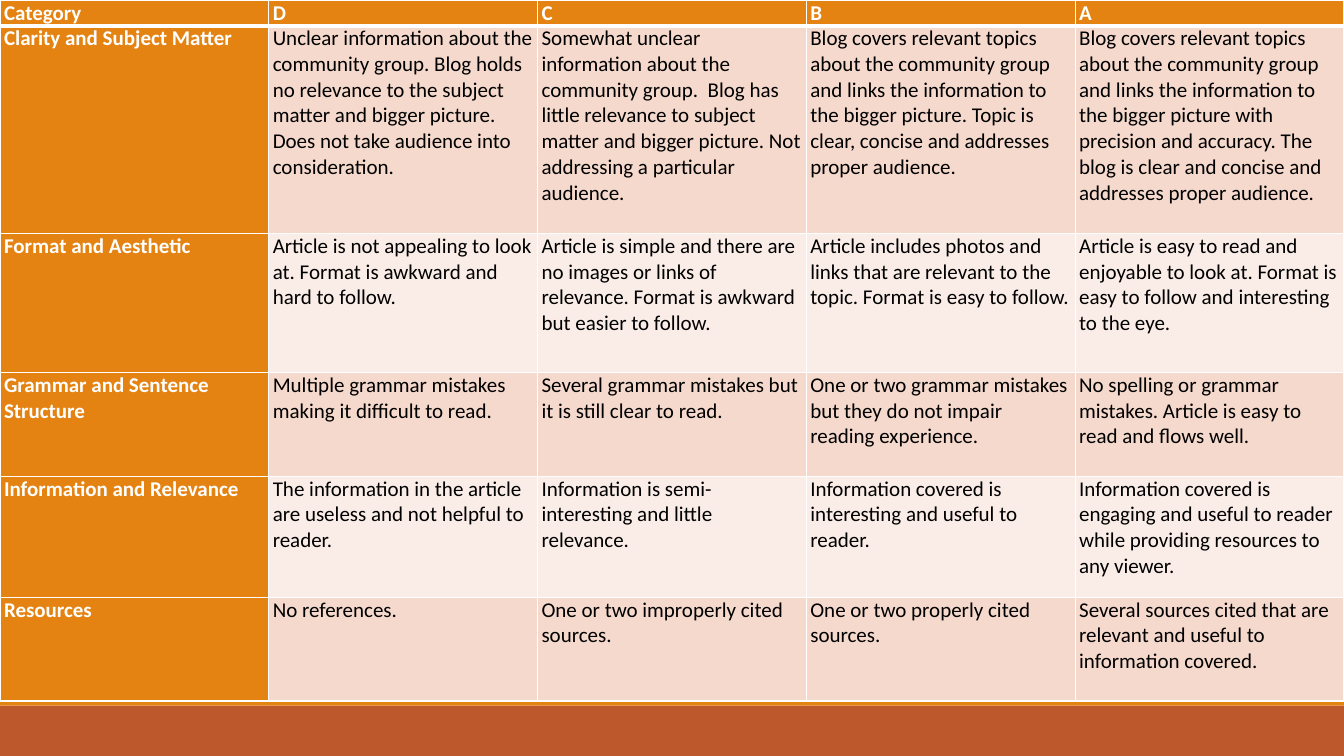
"""Build the blog marking rubric slide."""
from dataclasses import dataclass

import lxml.etree
import pptx
import pptx.dml.color
import pptx.enum.shapes
import pptx.oxml.ns
import pptx.util

Pt = pptx.util.Pt
HUES = {
    "accent": "E48312",
    "footer": "BD582C",
    "dark": "F5D9CC",
    "light": "FAEDE7",
    "white": "FFFFFF",
    "black": "000000",
}
WIDTH, HEIGHT = 960, 540
INSET = {
    "margin_left": Pt(2.88),
    "margin_right": Pt(2.88),
    "margin_top": Pt(0),
    "margin_bottom": Pt(0),
}
FONT = {"name": "Calibri", "size": Pt(15)}


@dataclass
class Band:
    """A full-width strip at the foot of the slide."""
    top: float
    height: float
    hue: str


@dataclass
class Row:
    """A rubric row: its height and its texts."""
    height: float
    texts: tuple[str, ...]


BANDS = [Band(504, 36, "footer"), Band(499, 5, "accent")]
ROWS = [
    Row(12.24, ("Category", "D", "C", "B", "A")),
    Row(148.4, (
        "Clarity and Subject Matter",
        "Unclear information about the community group. Blog holds no relevance "
        "to the subject matter and bigger picture. Does not take audience into "
        "consideration.",
        "Somewhat unclear information about the community group.  Blog has little "
        "relevance to subject matter and bigger picture. Not addressing a "
        "particular audience.",
        "Blog covers relevant topics about the community group and links the "
        "information to the bigger picture. Topic is clear, concise and addresses "
        "proper audience.",
        "Blog covers relevant topics about the community group and links the "
        "information to the bigger picture with precision and accuracy. The blog "
        "is clear and concise and addresses proper audience.",
    )),
    Row(99.2, (
        "Format and Aesthetic",
        "Article is not appealing to look at. Format is awkward and hard to follow.",
        "Article is simple and there are no images or links of relevance. Format "
        "is awkward but easier to follow.",
        "Article includes photos and links that are relevant to the topic. Format "
        "is easy to follow.",
        "Article is easy to read and enjoyable to look at. Format is easy to "
        "follow and interesting to the eye.",
    )),
    Row(74.2, (
        "Grammar and Sentence Structure",
        "Multiple grammar mistakes making it difficult to read.",
        "Several grammar mistakes but it is still clear to read.",
        "One or two grammar mistakes but they do not impair reading experience.",
        "No spelling or grammar mistakes. Article is easy to read and flows well.",
    )),
    Row(86.4, (
        "Information and Relevance",
        "The information in the article are useless and not helpful to reader.",
        "Information is semi-interesting and little relevance.",
        "Information covered is interesting and useful to reader.",
        "Information covered is engaging and useful to reader while providing "
        "resources to any viewer.",
    )),
    Row(74.2, (
        "Resources",
        "No references.",
        "One or two improperly cited sources.",
        "One or two properly cited sources.",
        "Several sources cited that are relevant and useful to information covered.",
    )),
]


def color(hue: str) -> pptx.dml.color.RGBColor:
    """Return the named colour."""
    return pptx.dml.color.RGBColor.from_string(HUES[hue])


def apply(target: object, values: dict) -> None:
    """Set each attribute in values on the target."""
    for name, value in values.items():
        setattr(target, name, value)


def paint(fill: object, hue: str) -> None:
    """Give a fill one solid colour."""
    fill.solid()
    fill.fore_color.rgb = color(hue)


def add_band(slide: object, band: Band) -> None:
    """Draw one footer strip."""
    kind = pptx.enum.shapes.MSO_SHAPE.RECTANGLE
    shape = slide.shapes.add_shape(kind, Pt(0), Pt(band.top), Pt(WIDTH), Pt(band.height))
    shape.shadow.inherit = False
    paint(shape.fill, band.hue)
    shape.line.fill.background()


def add_edges(cell: object, row: int) -> None:
    """Rule a cell in white, with a thick line under the header."""
    tag = pptx.oxml.ns.qn
    props = cell._tc.get_or_add_tcPr()
    thick = {(0, "B"), (1, "T")}
    for spot, side in enumerate("LRTB"):
        size = 3 if (row, side) in thick else 1
        edge = lxml.etree.Element(tag(f"a:ln{side}"), w=str(Pt(size)))
        fill = lxml.etree.SubElement(edge, tag("a:solidFill"))
        lxml.etree.SubElement(fill, tag("a:srgbClr"), val=HUES["white"])
        props.insert(spot, edge)


def fill_cell(cell: object, text: str, row: int, col: int) -> None:
    """Write and format one rubric cell."""
    head = row == 0 or col == 0
    cell.text = text
    apply(cell, INSET)
    font = cell.text_frame.paragraphs[0].runs[0].font
    apply(font, FONT | {"bold": head})
    font.color.rgb = color("white" if head else "black")
    paint(cell.fill, "accent" if head else "dark" if row % 2 else "light")
    add_edges(cell, row)


def add_rubric(slide: object, rows: list[Row]) -> None:
    """Draw the rubric table."""
    count = len(rows[0].texts)
    total = sum(row.height for row in rows)
    frame = slide.shapes.add_table(len(rows), count, Pt(0), Pt(0), Pt(WIDTH), Pt(total))
    table = frame.table
    for col in table.columns:
        col.width = Pt(WIDTH / count)
    for r, row in enumerate(rows):
        table.rows[r].height = Pt(row.height)
        for c, text in enumerate(row.texts):
            fill_cell(table.cell(r, c), text, r, c)


def main() -> None:
    """Build and save the deck."""
    deck = pptx.Presentation()
    apply(deck, {"slide_width": Pt(WIDTH), "slide_height": Pt(HEIGHT)})
    slide = deck.slides.add_slide(deck.slide_layouts[6])
    paint(slide.background.fill, "white")
    for band in BANDS:
        add_band(slide, band)
    add_rubric(slide, ROWS)
    deck.save("out.pptx")


if __name__ == "__main__":
    main()
